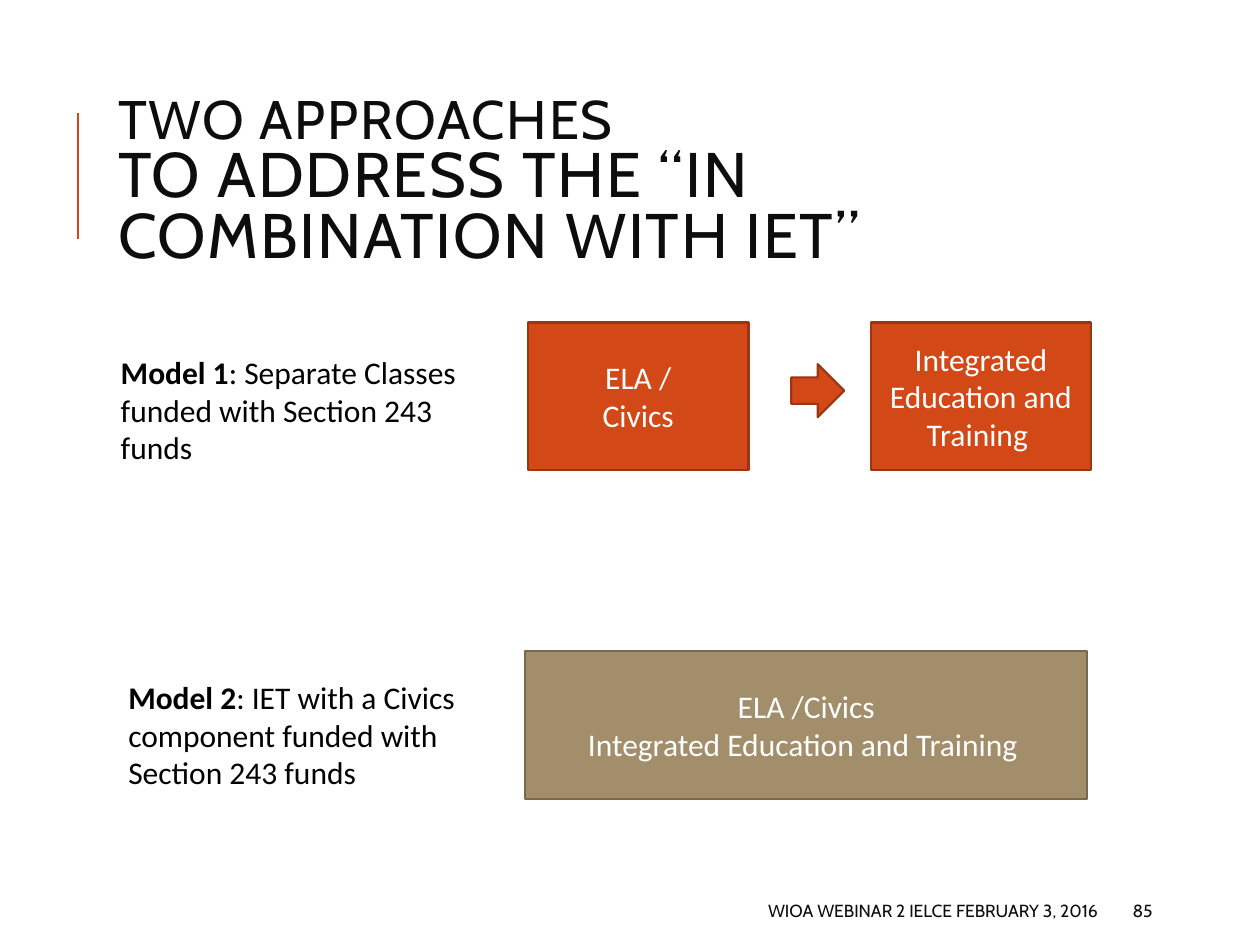
"""Build the slide that compares two approaches to combining ELA / Civics with IET."""
from dataclasses import dataclass

from lxml import etree
from pptx import Presentation
from pptx import util as u
from pptx.dml.color import RGBColor
from pptx.enum import shapes, text
from pptx.oxml import ns
from pptx.slide import Slide

ORANGE = RGBColor(0xD3, 0x48, 0x17)
RUST = RGBColor(0x9C, 0x35, 0x11)
TAN = RGBColor(0xA2, 0x8E, 0x6A)
UMBER = RGBColor(0x78, 0x69, 0x4E)
INK = RGBColor(0x0D, 0x0D, 0x0D)
BLACK = RGBColor(0, 0, 0)
WHITE = RGBColor(0xFF, 0xFF, 0xFF)

LEFT, CENTER, RIGHT = text.PP_ALIGN.LEFT, text.PP_ALIGN.CENTER, text.PP_ALIGN.RIGHT
TOP, MIDDLE = text.MSO_ANCHOR.TOP, text.MSO_ANCHOR.MIDDLE


@dataclass
class SlideBuilder:
    slide: Slide
    heading_font: str = "Cabin"
    body_font: str = "Calibri"
    body_size: float = 18
    outline: float = 1.25

    def style(self, run, font, size, color, bold=False):
        run.font.name = font
        run.font.size = u.Pt(size)
        run.font.color.rgb = color
        run.font.bold = bold

    def frame(self, place, anchor):
        box = self.slide.shapes.add_textbox(*map(u.Inches, place))
        box.text_frame.word_wrap = True
        box.text_frame.vertical_anchor = anchor
        return box.text_frame

    def rule(self, x, top, bottom):
        accent = self.slide.shapes.add_connector(
            shapes.MSO_CONNECTOR.STRAIGHT, *map(u.Inches, (x, bottom, x, top)))
        accent.line.color.rgb = ORANGE
        accent.line.width = u.Pt(1.5)
        etree.SubElement(accent._element.spPr, ns.qn("a:effectLst"))

    def title(self, place, lines, sizes):
        heading = self.frame(place, MIDDLE).paragraphs[0]
        heading.text = "\v".join(lines)
        heading.line_spacing = 0.8
        for run, size in zip(heading.runs, sizes):
            self.style(run, self.heading_font, size, INK)
            run._r.get_or_add_rPr().set("spc", "100")

    def footer(self, place, wording, align=LEFT):
        note = self.frame(place, MIDDLE).paragraphs[0]
        note.text = wording
        note.alignment = align
        self.style(note.runs[0], self.heading_font, 10, INK)

    def model(self, place, name, description):
        label = self.frame(place, TOP).paragraphs[0]
        for wording, bold in ((name, True), (f": {description}", False)):
            run = label.add_run()
            run.text = wording
            self.style(run, self.body_font, self.body_size, BLACK, bold)

    def block(self, place, fill, edge, wording="", kind=shapes.MSO_SHAPE.RECTANGLE):
        block = self.slide.shapes.add_shape(kind, *map(u.Inches, place))
        block.shadow.inherit = False
        block.fill.solid()
        block.fill.fore_color.rgb = fill
        block.line.color.rgb = edge
        block.line.width = u.Pt(self.outline)
        if wording:
            block.text_frame.text = wording
            block.text_frame.word_wrap = True
            block.text_frame.vertical_anchor = MIDDLE
            for paragraph in block.text_frame.paragraphs:
                paragraph.alignment = CENTER
                self.style(paragraph.runs[0], self.body_font, self.body_size, WHITE)


def main():
    deck = Presentation()
    deck.slide_width, deck.slide_height = u.Inches(10), u.Inches(7.5)
    page = SlideBuilder(deck.slides.add_slide(deck.slide_layouts[6]))

    page.rule(0.62, 0.9, 1.9)
    page.title((0.84, 0.64, 7.97, 1.64),
               ("TWO APPROACHES", "TO ADDRESS THE “IN COMBINATION WITH IET”"), (31, 36))
    page.footer((3.97, 7.08, 4.84, 0.3), "WIOA WEBINAR 2 IELCE FEBRUARY 3, 2016", RIGHT)
    page.footer((8.89, 7.08, 0.8, 0.3), "85")

    class_top, class_width, block_height = 2.56, 1.75, 1.17
    for left, wording in ((4.19, "ELA /\nCivics"),
                          (6.91, "Integrated Education and Training ")):
        page.block((left, class_top, class_width, block_height), ORANGE, RUST, wording)
    page.block((6.28, 2.89, 0.42, 0.42), ORANGE, RUST, kind=shapes.MSO_SHAPE.RIGHT_ARROW)
    page.block((4.17, 5.17, 4.46, block_height), TAN, UMBER,
               "ELA /Civics\nIntegrated Education and Training ")

    page.model((0.86, 2.75, 3.08, 1.01), "Model 1",
               "Separate Classes funded with Section 243 funds")
    page.model((0.92, 5.33, 3, 1.01), "Model 2",
               "IET with a Civics component funded with Section 243 funds")

    deck.save("out.pptx")


if __name__ == "__main__":
    main()
